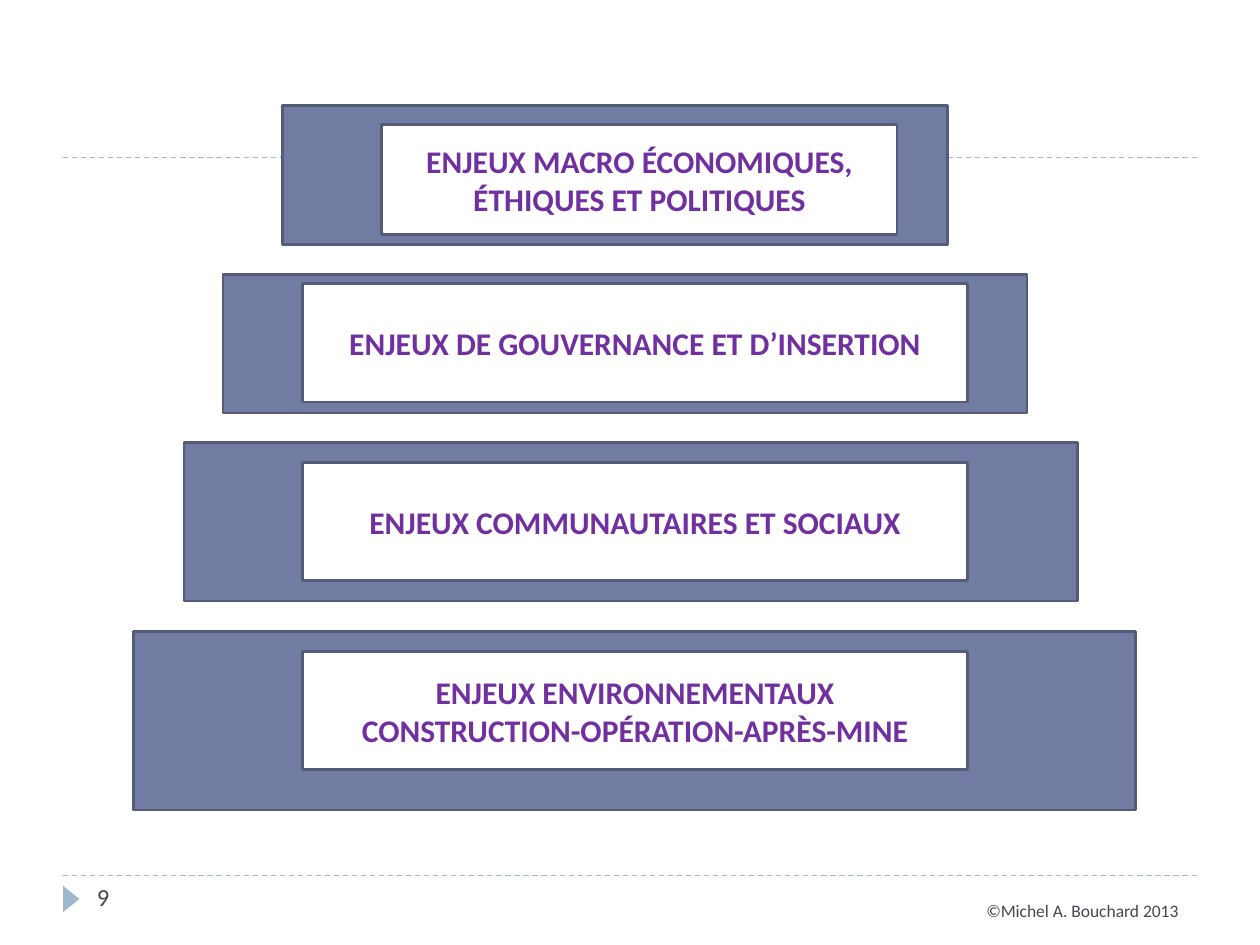
from lxml.etree import SubElement
from pptx import Presentation
from pptx.dml.color import RGBColor
from pptx.enum.dml import MSO_LINE
from pptx.enum.shapes import MSO_CONNECTOR, MSO_SHAPE
from pptx.enum.text import MSO_ANCHOR, PP_ALIGN
from pptx.oxml.ns import qn
from pptx.util import Inches, Pt

WHITE = RGBColor(0xFF, 0xFF, 0xFF)
SLATE = RGBColor(0x72, 0x7C, 0xA3)
OUTLINE = RGBColor(0x54, 0x5C, 0x79)
PALE_BLUE = RGBColor(0x9F, 0xB8, 0xCD)
PURPLE = RGBColor(0x70, 0x30, 0xA0)
DARK = RGBColor(0x46, 0x46, 0x53)

LABEL_FONT = {"name": "Calibri", "size": Pt(18), "bold": True}
NUMBER_FONT = {"name": "Calibri", "size": Pt(14)}
CREDIT_FONT = {"name": "Calibri", "size": Pt(10)}

# Each tier: band position, label position, label paragraphs
TIERS = [
    ((2.24, 0.84, 5.28, 1.1), (3.03, 0.99, 4.09, 0.87),
     ["ENJEUX MACRO ÉCONOMIQUES, ÉTHIQUES ET POLITIQUES"]),
    ((1.77, 2.18, 6.38, 1.1), (2.4, 2.25, 5.28, 0.94),
     ["ENJEUX DE GOUVERNANCE ET D’INSERTION"]),
    ((1.46, 3.51, 7.09, 1.26), (2.4, 3.67, 5.28, 0.94),
     ["ENJEUX COMMUNAUTAIRES ET SOCIAUX"]),
    ((1.06, 5.01, 7.95, 1.42), (2.4, 5.17, 5.28, 0.94),
     ["ENJEUX ENVIRONNEMENTAUX", "CONSTRUCTION-OPÉRATION-APRÈS-MINE"]),
]


def add_rule(page, top):
    rule = page.shapes.add_connector(
        MSO_CONNECTOR.STRAIGHT, Inches(0.5), Inches(top), Inches(9.5), Inches(top))
    rule.line.color.rgb = PALE_BLUE
    rule.line.width = Pt(0.75)
    rule.line.dash_style = MSO_LINE.DASH
    SubElement(rule._element.spPr, qn("a:effectLst"))


def add_solid(page, kind, place, fill, outline=None):
    shape = page.shapes.add_shape(kind, *map(Inches, place))
    shape.shadow.inherit = False
    shape.fill.solid()
    shape.fill.fore_color.rgb = fill
    if outline is None:
        shape.line.fill.background()
    else:
        shape.line.color.rgb = outline
        shape.line.width = Pt(1.5)
    return shape


def write(frame, lines, align, color, font_format):
    frame.word_wrap = True
    for index, line in enumerate(lines):
        para = frame.add_paragraph() if index else frame.paragraphs[0]
        para.alignment = align
        span = para.add_run()
        span.text = line
        span.font.color.rgb = color
        for name, value in font_format.items():
            setattr(span.font, name, value)


def add_text(page, place, text, align, font_format):
    box = page.shapes.add_textbox(*map(Inches, place))
    write(box.text_frame, [text], align, DARK, font_format)


def main():
    deck = Presentation()
    deck.slide_width, deck.slide_height = Inches(10), Inches(7.5)
    page = deck.slides.add_slide(deck.slide_layouts[6])

    # Dashed rules and footer marker
    for top in (6.95, 1.25):
        add_rule(page, top)
    marker = add_solid(page, MSO_SHAPE.ISOSCELES_TRIANGLE,
                       (0.46, 7.07, 0.21, 0.13), PALE_BLUE)
    marker.rotation = 90

    # Pyramid of issues: bands, then their labels
    for band, _, _ in TIERS:
        add_solid(page, MSO_SHAPE.RECTANGLE, band, SLATE, OUTLINE)
    for _, place, lines in TIERS:
        label = add_solid(page, MSO_SHAPE.RECTANGLE, place, WHITE, OUTLINE)
        label.text_frame.vertical_anchor = MSO_ANCHOR.MIDDLE
        write(label.text_frame, lines, PP_ALIGN.CENTER, PURPLE, LABEL_FONT)

    # Footer
    add_text(page, (0.67, 6.95, 2.17, 0.4), "9", PP_ALIGN.LEFT, NUMBER_FONT)
    add_text(page, (7.6, 7.09, 1.85, 0.26), "©Michel A. Bouchard 2013",
             PP_ALIGN.RIGHT, CREDIT_FONT)

    deck.save("out.pptx")


if __name__ == "__main__":
    main()
